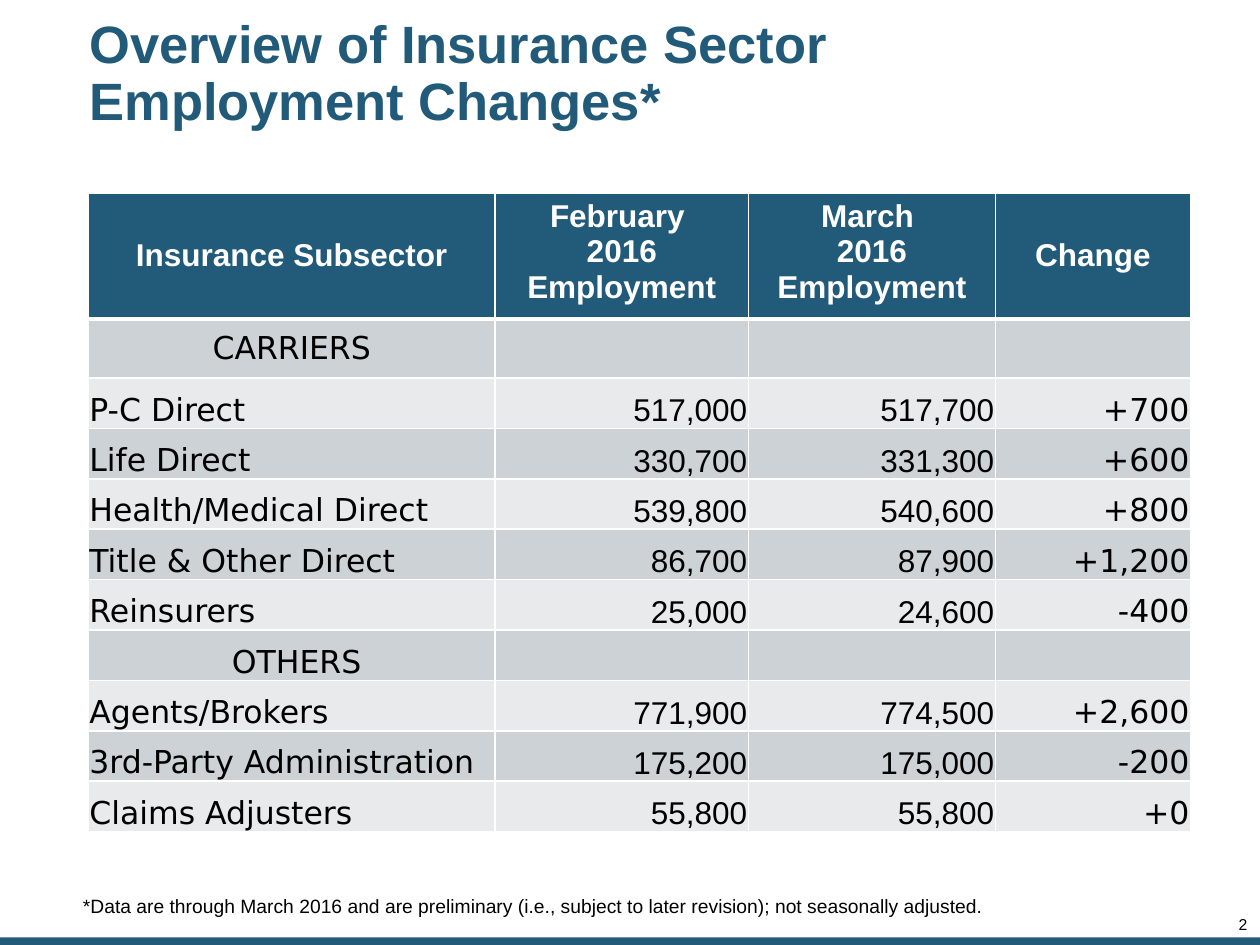
from typing import NamedTuple

from lxml import etree
from pptx import Presentation
from pptx.dml.color import RGBColor
from pptx.enum import shapes, text
from pptx.oxml import ns
from pptx.util import Inches, Pt

TEAL = RGBColor(0x22, 0x5A, 0x7A)
WHITE = RGBColor(0xFF, 0xFF, 0xFF)
BLACK = RGBColor(0x00, 0x00, 0x00)
DARK_BAND = RGBColor(0xCD, 0xD2, 0xD7)
LIGHT_BAND = RGBColor(0xE8, 0xEA, 0xEC)

SANS = "Arial"
WIDE_SANS = "DejaVu Sans"
LEFT, CENTER, RIGHT = text.PP_ALIGN.LEFT, text.PP_ALIGN.CENTER, text.PP_ALIGN.RIGHT
TOP, MIDDLE, BOTTOM = text.MSO_ANCHOR.TOP, text.MSO_ANCHOR.MIDDLE, text.MSO_ANCHOR.BOTTOM


class Style(NamedTuple):
    size: float
    color: RGBColor = BLACK
    font: str = SANS
    bold: bool = False
    align: text.PP_ALIGN = LEFT


class Label(NamedTuple):
    words: str
    at: tuple[float, float, float, float]
    style: Style
    insets: tuple[float, float, float, float] = (0.1, 0.05, 0.1, 0.05)
    anchor: text.MSO_ANCHOR = TOP
    line_spacing: float = 1.0
    grows: bool = True


class Subsector(NamedTuple):
    name: str
    february: str = ""
    march: str = ""
    change: str = ""

    @property
    def is_group(self) -> bool:
        return not self.february


LABELS = [
    Label("2", (9.41, 7.28, 0.49, 0.13), Style(9, align=RIGHT),
          insets=(0, 0, 0, 0), line_spacing=0.85),
    Label("Overview of Insurance Sector Employment Changes*", (0.66, 0.25, 7.75, 0.69),
          Style(30, TEAL, bold=True), insets=(0.05, 0.05, 0.05, 0.05),
          anchor=MIDDLE, line_spacing=0.9, grows=False),
    Label("*Data are through March 2016 and are preliminary (i.e., subject to later "
          "revision); not seasonally adjusted.", (0.56, 7.05, 9.04, 0.28), Style(11)),
]

# Each heading is a list of paragraphs; a newline is a line break within one.
HEADINGS = [
    ["Insurance Subsector"],
    ["February \n2016", "Employment"],
    ["March \n2016", "Employment"],
    ["Change"],
]
SUBSECTORS = [
    Subsector("CARRIERS"),
    Subsector("P-C Direct", "517,000", "517,700", "+700"),
    Subsector("Life Direct", "330,700", "331,300", "+600"),
    Subsector("Health/Medical Direct", "539,800", "540,600", "+800"),
    Subsector("Title & Other Direct", "86,700", "87,900", "+1,200"),
    Subsector("Reinsurers", "25,000", "24,600", "-400"),
    Subsector(" OTHERS"),
    Subsector("Agents/Brokers", "771,900", "774,500", "+2,600"),
    Subsector("3rd-Party Administration", "175,200", "175,000", "-200"),
    Subsector("Claims Adjusters", "55,800", "55,800", "+0"),
]
COLUMN_WIDTHS = [3.23, 2.01, 1.96, 1.55]
ROW_HEIGHTS = [1, 0.47] + [0.4] * 9
COLUMN_FONTS = [WIDE_SANS, SANS, SANS, WIDE_SANS]
HEADING_STYLE = Style(18, WHITE, bold=True, align=CENTER)


def write(para, words: str, style: Style) -> None:
    para.alignment = style.align
    for index, line in enumerate(words.split("\n")):
        if index:
            para.add_line_break()
        span = para.add_run()
        span.text = line
        span.font.size = Pt(style.size)
        span.font.name = style.font
        span.font.bold = style.bold
        span.font.color.rgb = style.color


def set_insets(holder, insets: tuple[float, float, float, float]) -> None:
    """Set the margins of a text frame or cell: left, top, right, bottom."""
    (holder.margin_left, holder.margin_top,
     holder.margin_right, holder.margin_bottom) = map(Inches, insets)


def add_label(page, label: Label) -> None:
    box = page.shapes.add_textbox(*map(Inches, label.at))
    frame = box.text_frame
    frame.word_wrap = True
    frame.vertical_anchor = label.anchor
    if label.grows:
        frame.auto_size = text.MSO_AUTO_SIZE.SHAPE_TO_FIT_TEXT
    set_insets(frame, label.insets)
    para = frame.paragraphs[0]
    para.line_spacing = label.line_spacing
    write(para, label.words, label.style)


def add_footer_bar(page) -> None:
    bar = page.shapes.add_shape(shapes.MSO_SHAPE.RECTANGLE,
                                Inches(0), Inches(7.44), Inches(10), Inches(0.06))
    bar.shadow.inherit = False
    bar.fill.solid()
    bar.fill.fore_color.rgb = TEAL
    bar.line.fill.background()


def dress_cell(cell, fill: RGBColor, top: float = 1, bottom: float = 1) -> None:
    """Give a cell white borders, with widths in points, and a fill."""
    properties = cell._tc.get_or_add_tcPr()
    for side, width in (("L", 1), ("R", 1), ("T", top), ("B", bottom)):
        border = etree.SubElement(properties, ns.qn(f"a:ln{side}"), w=str(Pt(width)))
        solid = etree.SubElement(border, ns.qn("a:solidFill"))
        etree.SubElement(solid, ns.qn("a:srgbClr"), val=str(WHITE))
    cell.fill.solid()
    cell.fill.fore_color.rgb = fill


def fill_heading(cell, lines: list[str]) -> None:
    dress_cell(cell, TEAL, bottom=3)
    set_insets(cell, (0.1, 0.05, 0.1, 0.05))
    cell.vertical_anchor = MIDDLE if len(lines) == 1 else TOP
    frame = cell.text_frame
    for index, line in enumerate(lines):
        para = frame.add_paragraph() if index else frame.paragraphs[0]
        write(para, line, HEADING_STYLE)


def fill_subsector(table, row: int, subsector: Subsector) -> None:
    first = row == 1
    for column, words in enumerate(subsector):
        cell = table.cell(row, column)
        dress_cell(cell, DARK_BAND if row % 2 else LIGHT_BAND, top=3 if first else 1)
        set_insets(cell, (0.01, 0.01, 0.01, 0))
        cell.vertical_anchor = MIDDLE if first else BOTTOM
        if words:
            align = CENTER if subsector.is_group else RIGHT if column else LEFT
            write(cell.text_frame.paragraphs[0], words,
                  Style(18, font=COLUMN_FONTS[column], align=align))


def add_employment_table(page) -> None:
    table = page.shapes.add_table(
        len(ROW_HEIGHTS), len(COLUMN_WIDTHS), Inches(0.7), Inches(1.53),
        Inches(sum(COLUMN_WIDTHS)), Inches(sum(ROW_HEIGHTS))).table
    table.first_row = table.horz_banding = False
    for column, width in zip(table.columns, COLUMN_WIDTHS):
        column.width = Inches(width)
    for row, height in zip(table.rows, ROW_HEIGHTS):
        row.height = Inches(height)
    for column, lines in enumerate(HEADINGS):
        fill_heading(table.cell(0, column), lines)
    for row, subsector in enumerate(SUBSECTORS, start=1):
        fill_subsector(table, row, subsector)


def main() -> None:
    deck = Presentation()
    deck.slide_width, deck.slide_height = Inches(10), Inches(7.5)
    page = deck.slides.add_slide(deck.slide_layouts[6])
    add_footer_bar(page)
    for label in LABELS:
        add_label(page, label)
    add_employment_table(page)
    deck.save("out.pptx")


if __name__ == "__main__":
    main()
